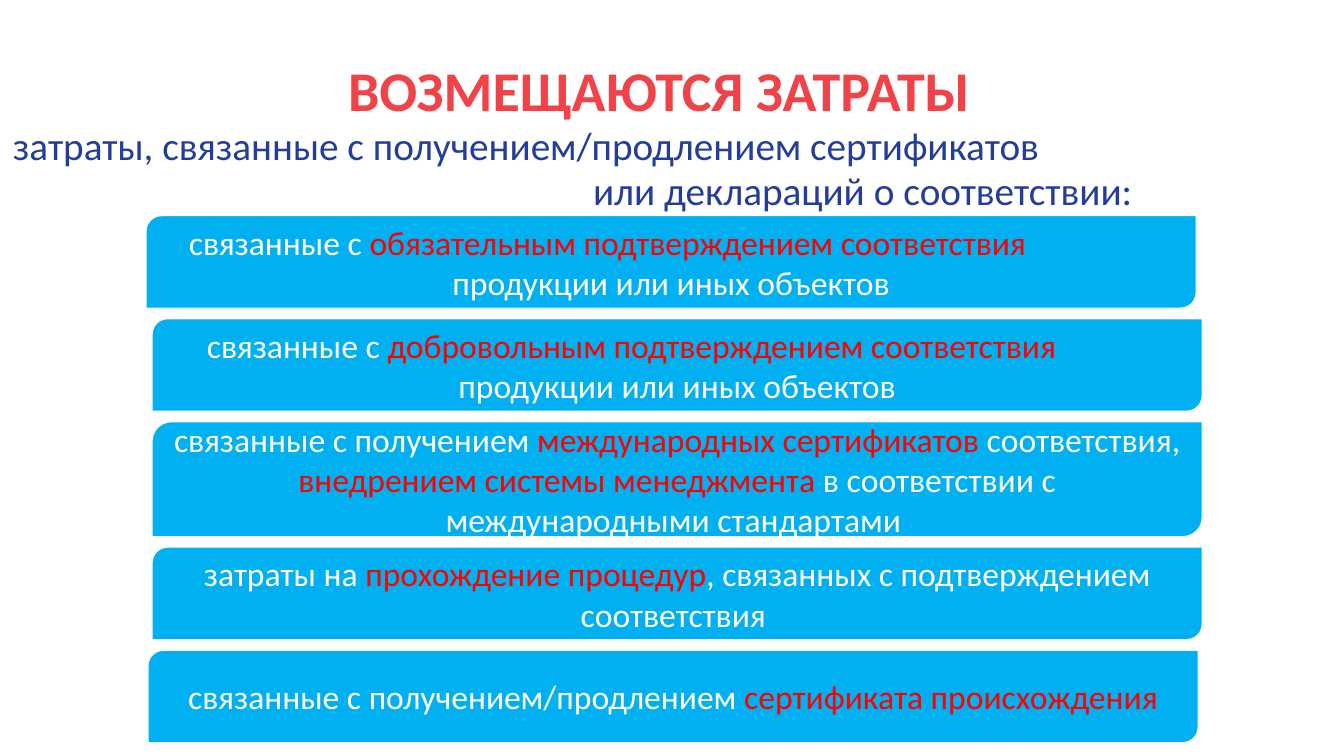
import pptx
import pptx.dml.color
import pptx.enum.shapes
import pptx.enum.text
import pptx.util

Pt = pptx.util.Pt
ALIGN = pptx.enum.text.PP_ALIGN
ANCHOR = pptx.enum.text.MSO_ANCHOR

RED, BLUE, SKY, ACCENT, WHITE = "F04247", "243D99", "00B0F0", "FF0000", "FFFFFF"
FONT = "Calibri"

# Title lines: text, indent, size, colour, bold
TITLE_LINES = [
    ("ВОЗМЕЩАЮТСЯ ЗАТРАТЫ", 241.4, 40, RED, True),
    ("затраты, связанные с получением/продлением сертификатов", 2, 28, BLUE, False),
    ("или деклараций о соответствии:", 416.4, 28, BLUE, False),
]

# Cost cards: left, height, lines; a line is an indent (None = centred) and its spans
CARDS = [
    (104.4, 66, [
        (20.2, [("связанные с ", WHITE), ("обязательным подтверждением соответствия", ACCENT)]),
        (None, [("продукции или иных объектов", WHITE)]),
    ]),
    (108.7, 66, [
        (28.8, [("связанные с ", WHITE), ("добровольным подтверждением соответствия", ACCENT)]),
        (None, [("продукции или иных объектов", WHITE)]),
    ]),
    (108.7, 82, [
        (None, [("связанные с получением ", WHITE), ("международных сертификатов ", ACCENT),
                ("соответствия, ", WHITE), ("внедрением системы менеджмента ", ACCENT),
                ("в соответствии с международными стандартами ", WHITE)]),
    ]),
    (108.7, 66, [
        (None, [("затраты на ", WHITE), ("прохождение процедур", ACCENT),
                (", связанных с подтверждением соответствия ", WHITE)]),
    ]),
    (105.8, 66, [
        (None, [("связанные с получением/продлением ", WHITE),
                ("сертификата происхождения", ACCENT)]),
    ]),
]
CARDS_TOP, CARD_WIDTH, CARD_GAP, CARD_SIZE = 154.1, 750, 7.6, 24


def color(value):
    return pptx.dml.color.RGBColor.from_string(value)


def add_line(frame, first, indent, spans, size, bold=False):
    para = frame.paragraphs[0] if first else frame.add_paragraph()
    para.alignment = ALIGN.CENTER if indent is None else ALIGN.LEFT
    if indent is not None:
        properties = para._p.get_or_add_pPr()
        properties.set("marL", str(int(Pt(indent))))
        properties.set("indent", "0")
    para.space_before = para.space_after = Pt(0)
    for text, ink in spans:
        span = para.add_run()
        span.text = text
        span.font.name = FONT
        span.font.size = Pt(size)
        span.font.bold = bold
        span.font.color.rgb = color(ink)
    return para


deck = pptx.Presentation()
deck.slide_width, deck.slide_height = Pt(960), Pt(540)
page = deck.slides.add_slide(deck.slide_layouts[5])
page.background.fill.solid()
page.background.fill.fore_color.rgb = color(WHITE)

# Title
title = page.shapes.title
title.left, title.top, title.width, title.height = Pt(0), Pt(15), Pt(960), Pt(138.5)
frame = title.text_frame
frame.word_wrap = True
frame.auto_size = pptx.enum.text.MSO_AUTO_SIZE.NONE
frame.vertical_anchor = ANCHOR.BOTTOM
frame.margin_left = frame.margin_right = Pt(7.2)
frame.margin_bottom = Pt(0)
for number, (text, indent, size, ink, bold) in enumerate(TITLE_LINES):
    para = add_line(frame, number == 0, indent, [(text, ink)], size, bold)
    para.line_spacing = 0.96

# Cost cards, stacked with an equal gap
top = CARDS_TOP
for left, height, lines in CARDS:
    card = page.shapes.add_shape(
        pptx.enum.shapes.MSO_SHAPE.ROUND_2_DIAG_RECTANGLE,
        Pt(left), Pt(top), Pt(CARD_WIDTH), Pt(height))
    card.shadow.inherit = False
    card.fill.solid()
    card.fill.fore_color.rgb = color(SKY)
    card.line.color.rgb = color(WHITE)
    card.line.width = Pt(0.75)
    card.text_frame.word_wrap = True
    card.text_frame.vertical_anchor = ANCHOR.MIDDLE
    for number, (indent, spans) in enumerate(lines):
        add_line(card.text_frame, number == 0, indent, spans, CARD_SIZE)
    top += height + CARD_GAP

deck.save("out.pptx")
